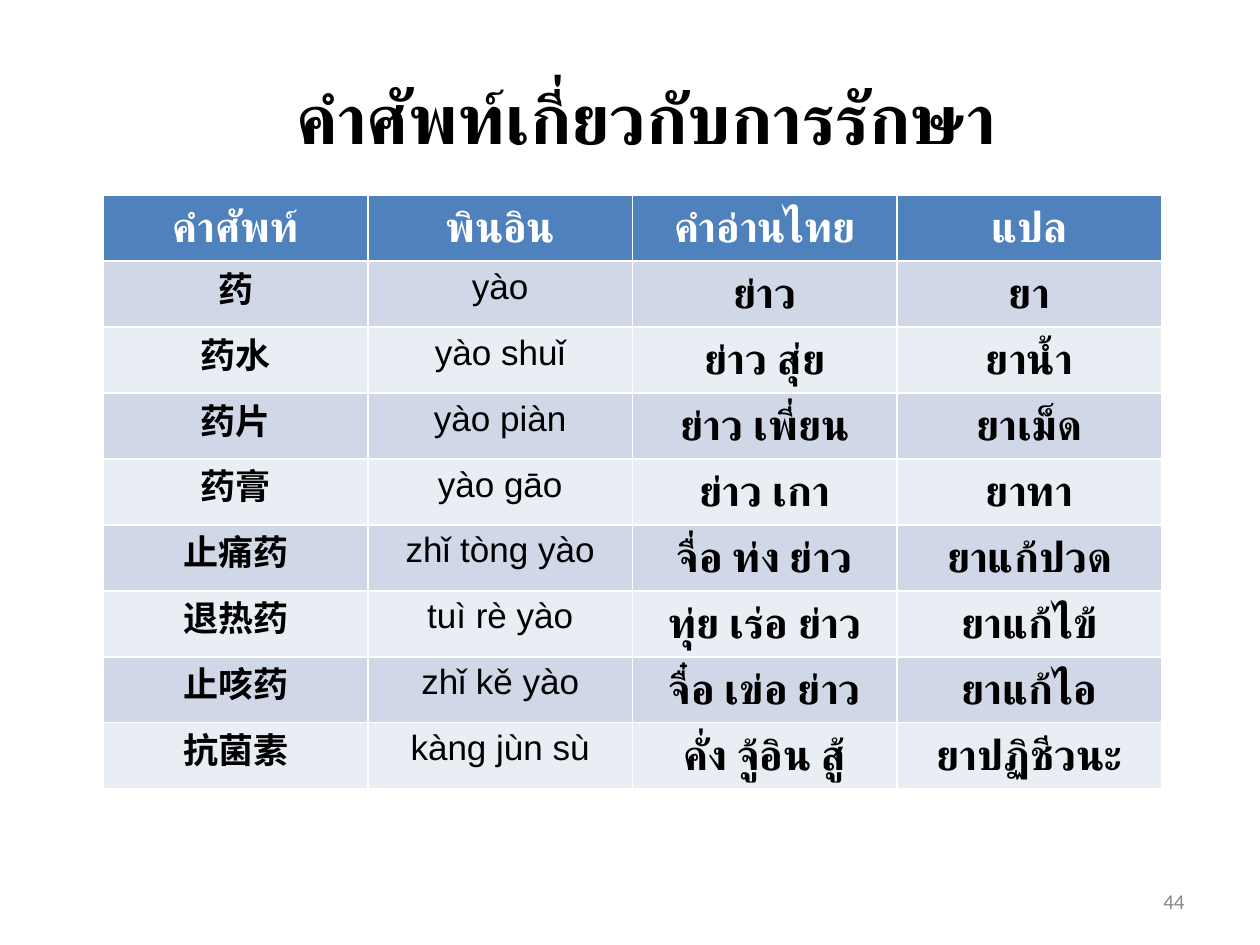
from lxml.etree import SubElement
from pptx import Presentation
from pptx.dml.color import RGBColor
from pptx.enum.text import MSO_ANCHOR, PP_ALIGN
from pptx.oxml.ns import qn
from pptx.util import Inches, Pt

BLACK = RGBColor(0x00, 0x00, 0x00)
WHITE = RGBColor(0xFF, 0xFF, 0xFF)
GRAY = RGBColor(0x88, 0x88, 0x88)
BLUE = RGBColor(0x4F, 0x81, 0xBD)
BAND_DARK = RGBColor(0xD0, 0xD8, 0xE8)
BAND_LIGHT = RGBColor(0xE9, 0xED, 0xF4)

TITLE = {"name": "Lato", "size": Pt(40), "bold": True}
HEADER = {"name": "Lato", "size": Pt(24), "bold": True}
CHINESE = {"name": "Lato", "size": Pt(20), "bold": True}
PINYIN = {"name": "Arial", "size": Pt(20), "bold": False}
THAI = HEADER
NUMBER = {"name": "Calibri", "size": Pt(12), "bold": False}
COLUMN_FORMATS = [CHINESE, PINYIN, THAI, THAI]

HEADINGS = ["คำศัพท์", "พินอิน", "คำอ่านไทย", "แปล"]
WORDS = [
    ["药", "yào", "ย่าว", "ยา"],
    ["药水", "yào shuǐ", "ย่าว สุ่ย", "ยาน้ำ"],
    ["药片", "yào piàn", "ย่าว เพี่ยน", "ยาเม็ด"],
    ["药膏", "yào gāo", "ย่าว เกา", "ยาทา"],
    ["止痛药", "zhǐ tòng yào", "จื่อ ท่ง ย่าว", "ยาแก้ปวด"],
    ["退热药", "tuì rè yào", "ทุ่ย เร่อ ย่าว", "ยาแก้ไข้"],
    ["止咳药", "zhǐ kě yào", "จื๋อ เข่อ ย่าว", "ยาแก้ไอ"],
    ["抗菌素", "kàng jùn sù", "คั่ง จู้อิน สู้", "ยาปฏิชีวนะ"],
]


def write(tf, text, style, color, align=PP_ALIGN.CENTER):
    p = tf.paragraphs[0]
    p.alignment = align
    r = p.add_run()
    r.text = text
    for key, value in style.items():
        setattr(r.font, key, value)
    r.font.color.rgb = color
    for tag in ("a:ea", "a:cs"):
        SubElement(r.font._element, qn(tag)).set("typeface", style["name"])


def add_text(s, box, text, style, color, align):
    tf = s.shapes.add_textbox(*map(Inches, box)).text_frame
    tf.word_wrap = True
    tf.vertical_anchor = MSO_ANCHOR.MIDDLE
    write(tf, text, style, color, align)


def add_vocabulary(s, box):
    rows = [HEADINGS] + WORDS
    x, y, w, h = map(Inches, box)
    table = s.shapes.add_table(len(rows), len(HEADINGS), x, y, w, h).table
    for i, row in enumerate(rows):
        fill = BLUE if i == 0 else BAND_DARK if i % 2 else BAND_LIGHT
        color = WHITE if i == 0 else BLACK
        styles = [HEADER] * len(HEADINGS) if i == 0 else COLUMN_FORMATS
        for j, (text, style) in enumerate(zip(row, styles)):
            cell = table.cell(i, j)
            cell.fill.solid()
            cell.fill.fore_color.rgb = fill
            write(cell.text_frame, text, style, color)


def main():
    prs = Presentation()
    prs.slide_width, prs.slide_height = Inches(10), Inches(7.5)
    s = prs.slides.add_slide(prs.slide_layouts[6])
    add_text(s, (0.63, 0.3, 9, 1.25), "คำศัพท์เกี่ยวกับการรักษา", TITLE, BLACK, PP_ALIGN.CENTER)
    add_vocabulary(s, (0.82, 1.55, 8.4, 4.71))
    add_text(s, (7.17, 6.95, 2.33, 0.4), "44", NUMBER, GRAY, PP_ALIGN.RIGHT)
    prs.save("out.pptx")


if __name__ == "__main__":
    main()
